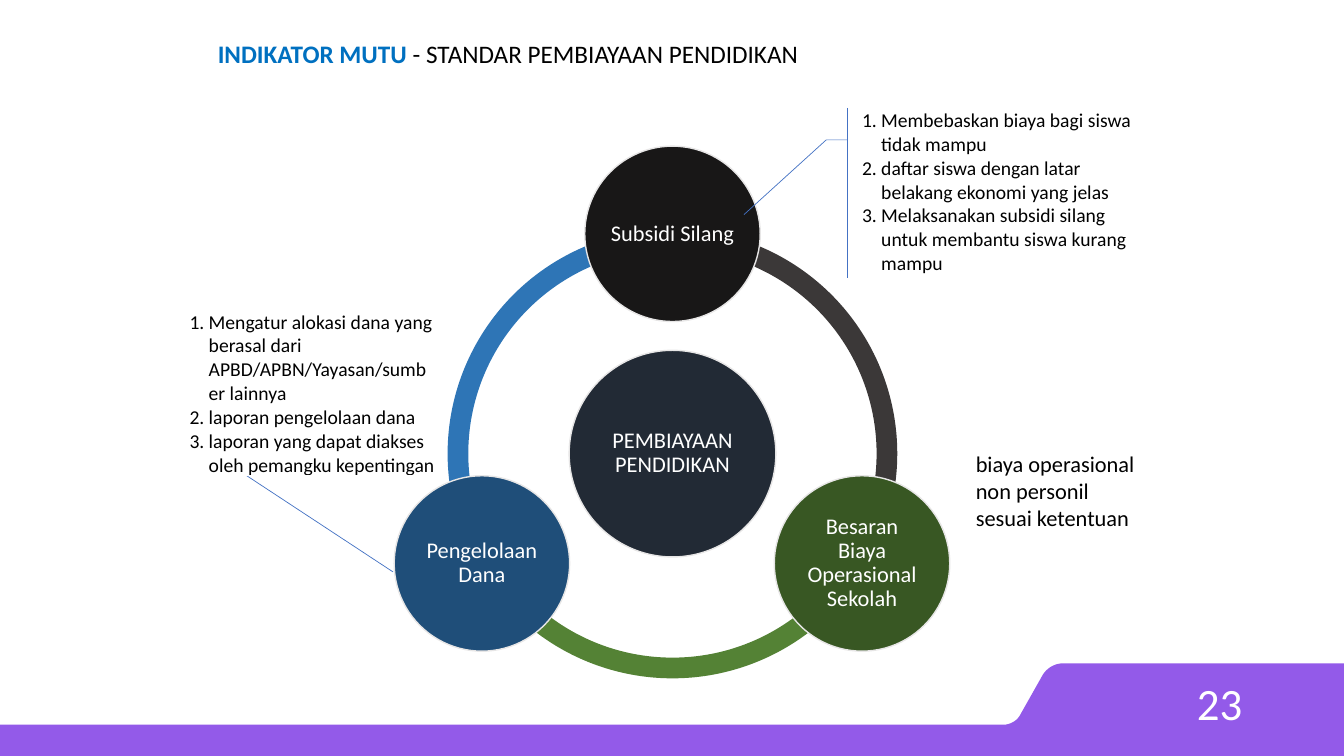
from lxml import etree
from pptx import Presentation, util as u
from pptx.dml.color import RGBColor
from pptx.enum import shapes, text
from pptx.oxml.ns import qn

FONT = "Calibri"
BLACK, WHITE = "000000", "FFFFFF"
SHAPE = shapes.MSO_SHAPE


def color(value):
    return RGBColor.from_string(value)


def inches(*lengths):
    return [u.Inches(length) for length in lengths]


def add_span(para, words, size, ink, bold=False):
    span = para.add_run()
    span.text = words
    span.font.name = FONT
    span.font.size = u.Pt(size)
    span.font.bold = bold
    span.font.color.rgb = color(ink)


def add_filled(page, kind, box, fill):
    shape = page.shapes.add_shape(kind, *inches(*box))
    shape.shadow.inherit = False
    shape.fill.solid()
    shape.fill.fore_color.rgb = color(fill)
    shape.line.fill.background()
    return shape


def curve(start, bend_1, bend_2, end, steps=12):
    """Points along a cubic curve, the start left out."""
    for step in range(1, steps + 1):
        t = step / steps
        weights = ((1 - t) ** 3, 3 * t * (1 - t) ** 2, 3 * t * t * (1 - t), t ** 3)
        yield tuple(sum(w * p[axis] for w, p in zip(weights, (start, bend_1, bend_2, end)))
                    for axis in (0, 1))


def add_footer(page, left, top, width, height, number):
    # Purple band with a raised tab at the right
    right, bottom, low = left + width, top + height, top + 0.61
    tab = left + 10.55
    points = [*curve((tab, top), (tab - 0.09, top), (tab - 0.17, top + 0.05),
                     (tab - 0.21, top + 0.12)),
              (tab - 0.43, top + 0.51),
              *curve((tab - 0.43, top + 0.51), (tab - 0.46, top + 0.57),
                     (tab - 0.53, low), (tab - 0.6, low)),
              (left, low), (left, bottom), (right, bottom), (right, top)]
    outline = page.shapes.build_freeform(*inches(tab, top))
    outline.add_line_segments([inches(*point) for point in points], close=True)
    band = outline.convert_to_shape()
    band.shadow.inherit = False
    band.fill.solid()
    band.fill.fore_color.rgb = color("935AE9")
    band.line.fill.background()

    # Page number
    box = page.shapes.add_textbox(*inches(left + 9.42, top + 0.19, 3, 0.4))
    box.text_frame.word_wrap = True
    box.text_frame.vertical_anchor = text.MSO_ANCHOR.MIDDLE
    para = box.text_frame.paragraphs[0]
    para.alignment = text.PP_ALIGN.RIGHT
    add_span(para, number, 32, WHITE)


def add_heading(page, left, top, width, height):
    title = page.shapes.title
    title.left, title.top, title.width, title.height = inches(left, top, width, height)
    frame = title.text_frame
    frame.word_wrap = False
    frame.auto_size = text.MSO_AUTO_SIZE.NONE
    frame.vertical_anchor = text.MSO_ANCHOR.TOP
    para = frame.paragraphs[0]
    para.alignment = text.PP_ALIGN.LEFT
    add_span(para, "INDIKATOR MUTU ", 18, "0070C0", bold=True)
    add_span(para, "- STANDAR PEMBIAYAAN PENDIDIKAN", 18, BLACK)


def add_disc(page, center_x, center_y, size, fill, words, side_margin=0.02):
    disc = add_filled(page, SHAPE.OVAL,
                      (center_x - size / 2, center_y - size / 2, size, size), fill)
    disc.line.color.rgb = color("E7E6E6")
    disc.line.width = u.Pt(1)
    frame = disc.text_frame
    frame.word_wrap = True
    frame.vertical_anchor = text.MSO_ANCHOR.MIDDLE
    frame.margin_left = frame.margin_right = u.Inches(side_margin)
    frame.margin_top = frame.margin_bottom = u.Inches(0.02)
    para = frame.paragraphs[0]
    para.alignment = text.PP_ALIGN.CENTER
    para.line_spacing = 0.9
    add_span(para, words, 16, WHITE)


def add_cycle(page, left, top, size):
    # Ring of three arcs; angles are in units of 100000/60000 degree
    for start, end, fill in ((90, 162, "2E75B6"), (18, 90, "548235"), (162, 18, "3B3838")):
        arc = add_filled(page, SHAPE.BLOCK_ARC, (left, top, size, size), fill)
        for index, value in enumerate((start, end, 0.046)):
            arc.adjustments[index] = value

    # Hub, then the three discs around it
    x, y = left + size / 2, top + size / 2
    add_disc(page, x, y, 2.05, "222A35", "PEMBIAYAAN PENDIDIKAN")
    add_disc(page, x, y - 2.18, 1.74, "181717", "Subsidi Silang", side_margin=0)
    add_disc(page, x + 1.88, y + 1.09, 1.74, "385723", "Besaran Biaya Operasional Sekolah")
    add_disc(page, x - 1.89, y + 1.09, 1.74, "1F4E79", "Pengelolaan Dana")


def add_callout(page, box, tip, rotation=0):
    callout = page.shapes.add_shape(SHAPE.LINE_CALLOUT_2_BORDER_AND_ACCENT_BAR, *inches(*box))
    callout.shadow.inherit = False
    callout.rotation = rotation
    callout.fill.background()
    callout.line.color.rgb = color("4472C4")
    callout.line.width = u.Pt(0.5)
    for index, value in enumerate((0.188, -0.083, 0.188, -0.167, *tip)):
        callout.adjustments[index] = value


def add_numbered_table(page, box, items):
    table = page.shapes.add_table(1, 1, *inches(*box)).table
    table.first_row = table.horz_banding = False
    cell = table.cell(0, 0)
    cell.fill.solid()
    cell.fill.fore_color.rgb = color(WHITE)
    cell.margin_left = cell.margin_right = cell.margin_top = u.Inches(0.01)
    cell.margin_bottom = 0
    frame = cell.text_frame
    for index, item in enumerate(items):
        para = frame.add_paragraph() if index else frame.paragraphs[0]
        props = para._p.get_or_add_pPr()
        props.set("marL", str(u.Inches(0.19)))
        props.set("indent", str(-u.Inches(0.19)))
        etree.SubElement(props, qn("a:buFont")).set("typeface", FONT)
        etree.SubElement(props, qn("a:buAutoNum")).set("type", "arabicPeriod")
        add_span(para, item, 14, BLACK)


def add_note(page, left, top, width, height, words):
    note = page.shapes.add_textbox(*inches(left, top, width, height))
    note.fill.solid()
    note.fill.fore_color.rgb = color(WHITE)
    note.text_frame.word_wrap = True
    add_span(note.text_frame.paragraphs[0], words, 16, BLACK)


def main():
    deck = Presentation()
    deck.slide_width, deck.slide_height = inches(13.33, 7.5)
    page = deck.slides.add_slide(deck.slide_layouts[5])

    add_footer(page, 0, 6.58, 13.33, 0.92, "23")
    add_cycle(page, 4.44, 2.27, 4.46)
    add_heading(page, 2.06, 0.33, 6.01, 0.4)

    # Cross subsidy
    add_callout(page, (8.62, 1.07, 2.55, 1.69), (0.627, -0.487))
    add_numbered_table(page, (8.54, 1.07, 2.79, 1.87), (
        "Membebaskan biaya bagi siswa tidak mampu",
        "daftar siswa dengan latar belakang ekonomi yang jelas",
        "Melaksanakan subsidi silang untuk membantu siswa kurang mampu"))

    # Operating cost
    add_note(page, 9.58, 4.42, 1.8, 1.18, "biaya operasional non personil sesuai ketentuan")

    # Fund management
    add_callout(page, (2.45, 2.6, 1.31, 2.38), (0.833, -0.938), rotation=270)
    add_numbered_table(page, (1.87, 3.07, 2.46, 1.64), (
        "Mengatur alokasi dana yang berasal dari APBD/APBN/Yayasan/sumber lainnya",
        "laporan pengelolaan dana",
        "laporan yang dapat diakses oleh pemangku kepentingan"))

    deck.save("out.pptx")


if __name__ == "__main__":
    main()
